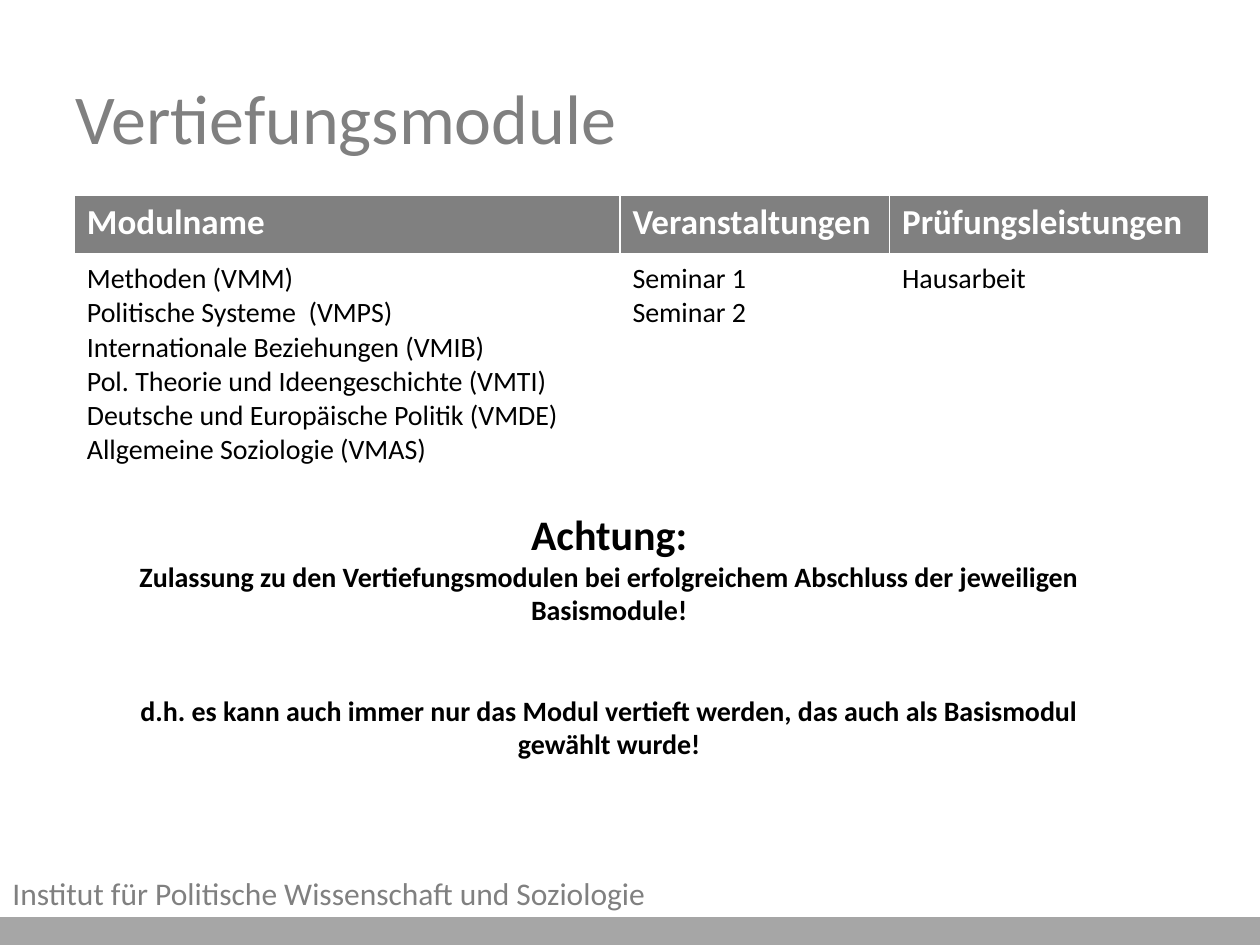
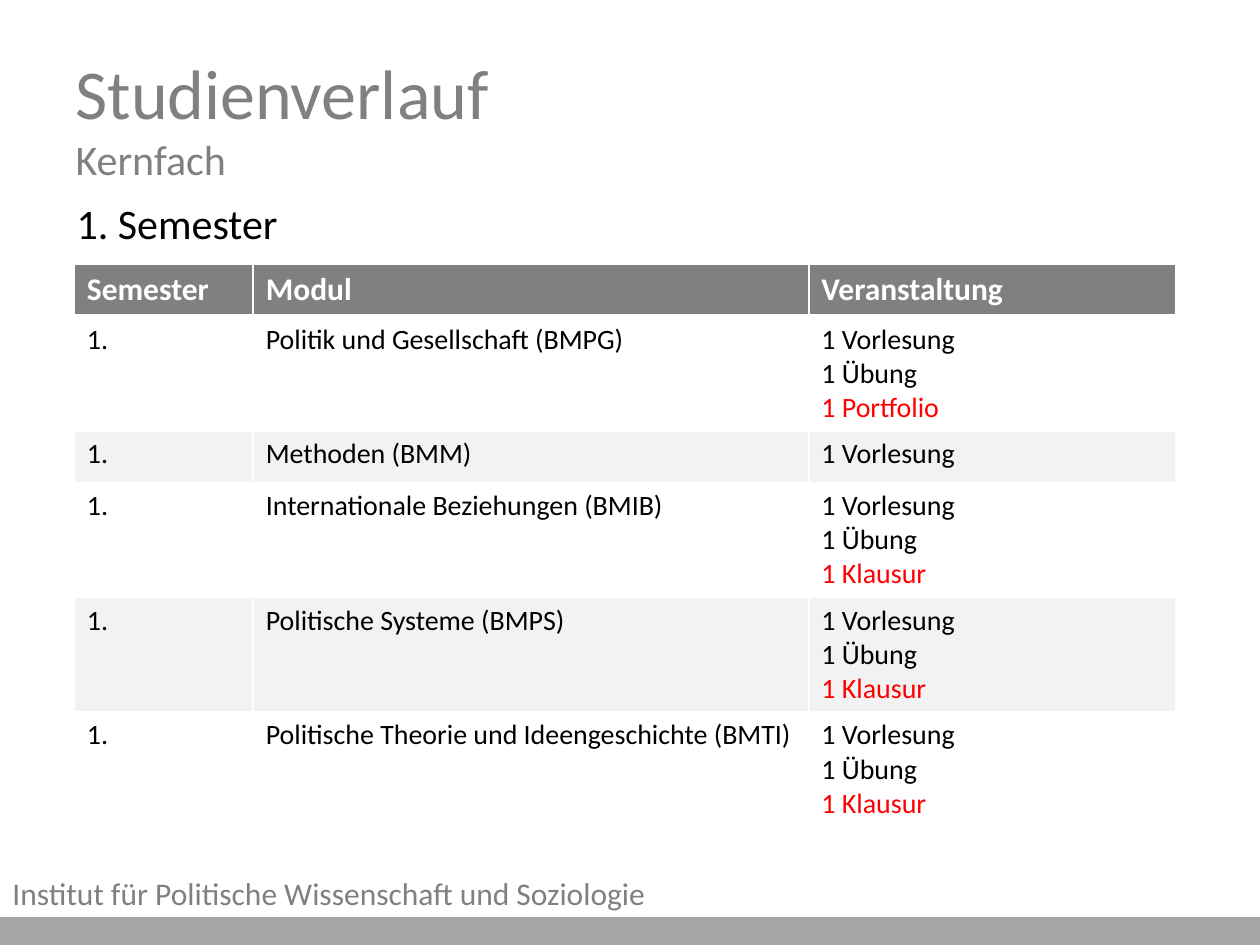
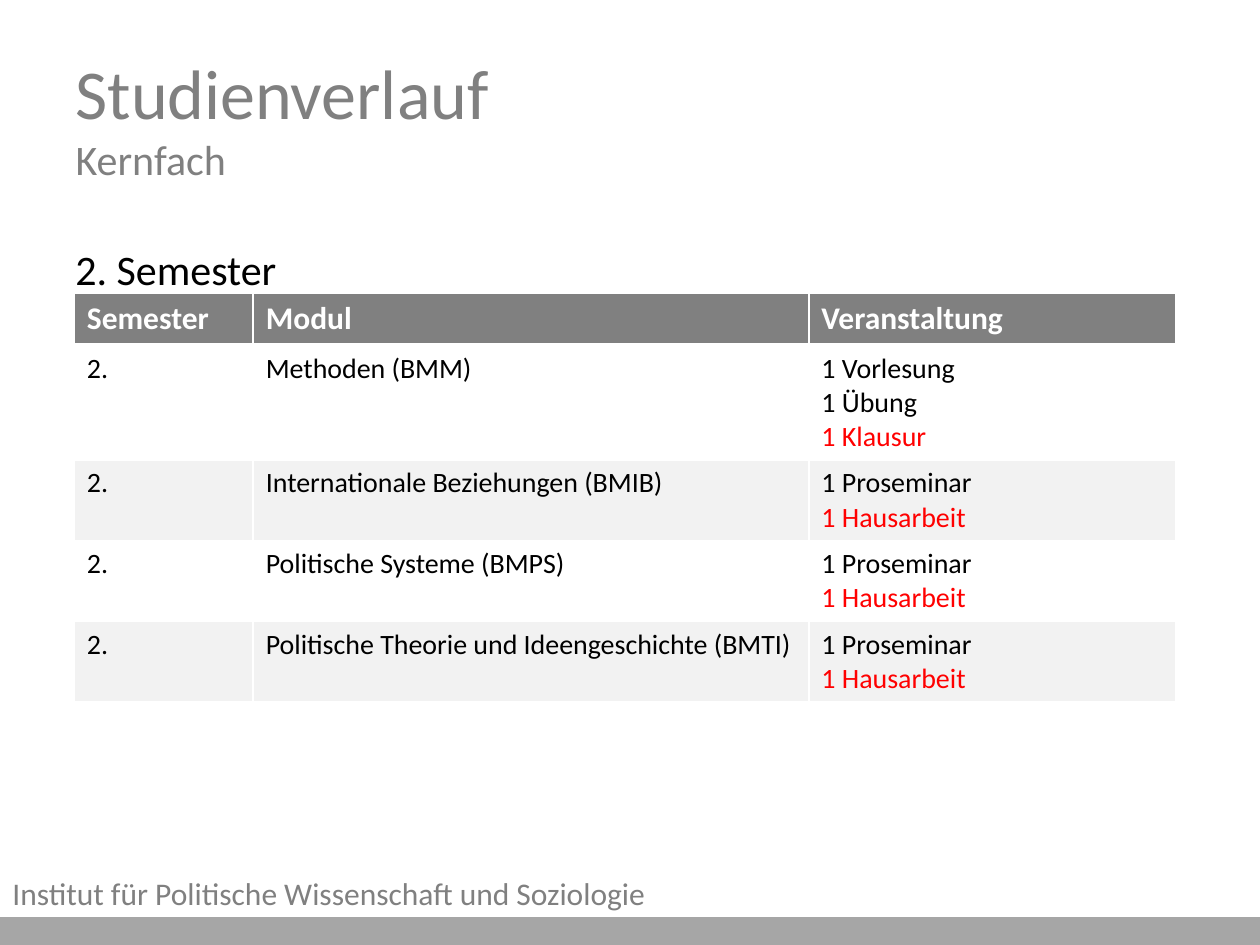
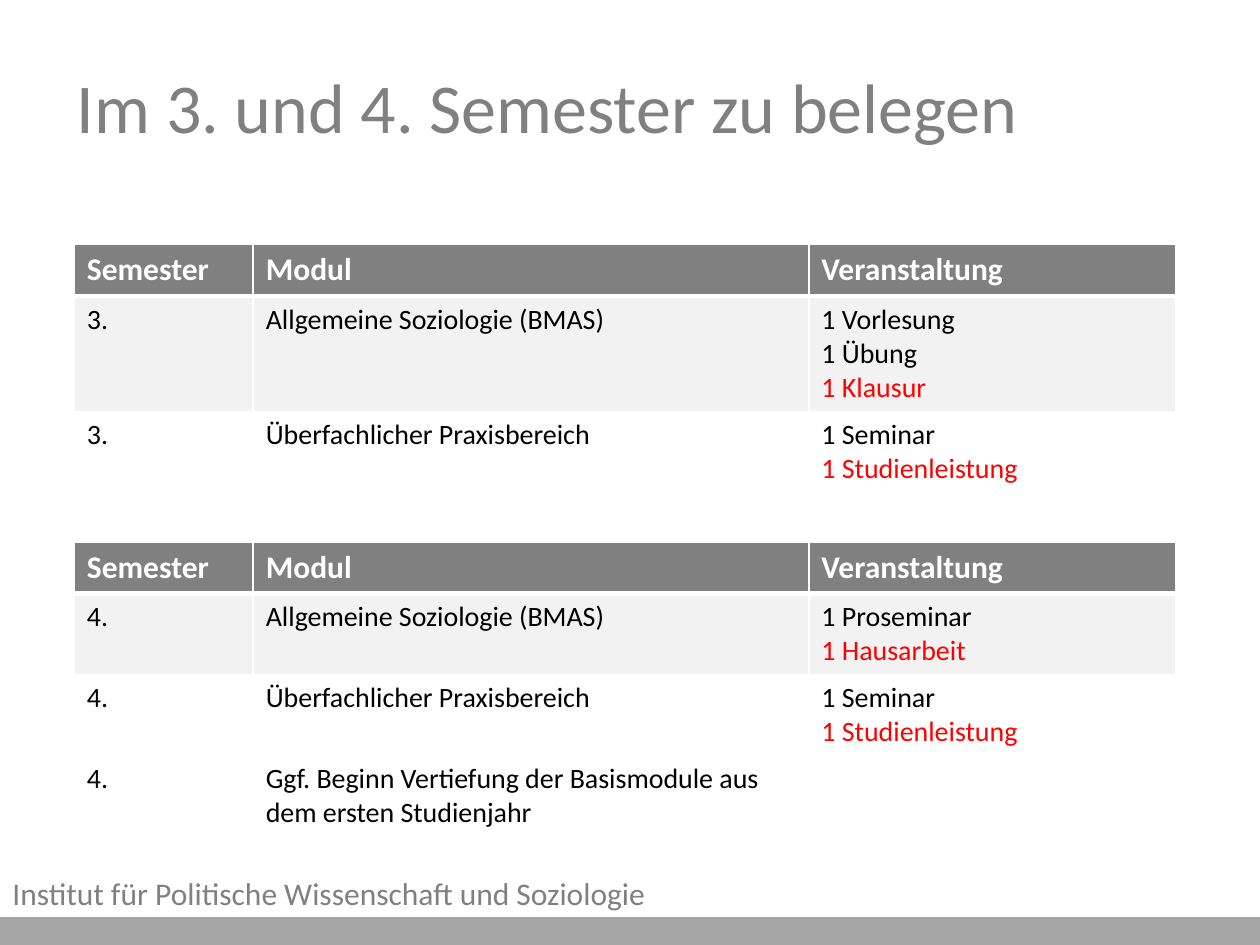
"""Build four slides on the modules and semesters of a politics degree."""
from dataclasses import dataclass
from lxml.etree import SubElement
from pptx import Presentation
from pptx.dml.color import RGBColor
from pptx.enum.shapes import MSO_SHAPE
from pptx.enum.text import MSO_ANCHOR, MSO_AUTO_SIZE, PP_ALIGN
from pptx.oxml.ns import qn
from pptx.util import Inches, Pt


@dataclass(frozen=True)
class Theme:
    font: str = "Calibri"
    grey: RGBColor = RGBColor(0x80, 0x80, 0x80)
    band: RGBColor = RGBColor(0xA6, 0xA6, 0xA6)
    tint: RGBColor = RGBColor(0xF2, 0xF2, 0xF2)
    white: RGBColor = RGBColor(0xFF, 0xFF, 0xFF)
    black: RGBColor = RGBColor(0, 0, 0)
    red: RGBColor = RGBColor(0xFF, 0, 0)
    title: int = 40
    sub: int = 24
    foot: int = 18
    body: int = 16


theme = Theme()
exams = {"1 Portfolio", "1 Klausur", "1 Hausarbeit", "1 Studienleistung"}
heads = ["Semester", "Modul", "Veranstaltung"]
widths = [1.42, 4.41, 2.91]


def write(frame, text, size, color, bold=False, align=PP_ALIGN.LEFT):
    frame.word_wrap = True
    frame.text = text
    for para in frame.paragraphs:
        para.alignment = align
        font = para.font
        font.name, font.size, font.bold = theme.font, Pt(size), bold
        font.color.rgb = theme.red if para.text in exams else color


def grid(slide, top, rows, tints=(), cols=widths, size=18, head=0.41):
    highs = [head] + [max(0.41, 0.1 + 0.27 * max(len(text.split("\n")) for text in row))
                      for row in rows[1:]]
    table = slide.shapes.add_table(len(rows), len(cols), Inches(0.59), Inches(top),
                                   Inches(sum(cols)), Inches(sum(highs))).table
    table.horz_banding = False
    for col, width in zip(table.columns, cols):
        col.width = Inches(width)
    for i, row in enumerate(rows):
        table.rows[i].height = Inches(highs[i])
        for j, text in enumerate(row):
            cell = table.cell(i, j)
            first = i == 0
            write(cell.text_frame, text, size if first else theme.body,
                  theme.white if first else theme.black, first)
            props = cell._tc.get_or_add_tcPr()
            for side in "LRTB":
                width = 3 if first and side == "B" else 1
                line = SubElement(props, qn(f"a:ln{side}"), w=str(Pt(width)))
                fill = SubElement(line, qn("a:solidFill"))
                SubElement(fill, qn("a:srgbClr"), val=str(theme.white))
            cell.fill.solid()
            cell.fill.fore_color.rgb = (theme.grey if first else
                                        theme.tint if i in tints else theme.white)


prs = Presentation()
prs.slide_width, prs.slide_height = Inches(10), Inches(7.5)

slides = []
for text, left, top in [("Vertiefungsmodule", 0.5, 0.3),
                        ("Studienverlauf\vKernfach", 0.5, 0.3),
                        ("Studienverlauf\vKernfach", 0.5, 0.3),
                        ("Im 3. und 4. Semester zu belegen", 0.51, 0.21)]:
    slide = prs.slides.add_slide(prs.slide_layouts[5])
    title = slide.shapes.title
    title.left, title.top = Inches(left), Inches(top)
    title.width, title.height = Inches(9), Inches(1.25)
    write(title.text_frame, text, theme.title, theme.grey)
    title.text_frame.vertical_anchor = MSO_ANCHOR.MIDDLE
    for run in title.text_frame.paragraphs[0].runs[1:]:
        run.font.size = Pt(theme.sub)
    slides.append(slide)
deep, one, two, late = slides

band = deep.shapes.add_shape(MSO_SHAPE.RECTANGLE, 0, Inches(7.29), Inches(10), Inches(0.21))
band.shadow.inherit = False
band.fill.solid()
band.fill.fore_color.rgb = band.line.color.rgb = theme.band
band.line.width = Pt(2)
foot = deep.shapes.add_textbox(0, Inches(6.89), Inches(7.09), Inches(0.4))
write(foot.text_frame, "Institut für Politische Wissenschaft und Soziologie",
      theme.foot, theme.grey)
for shape in (band, foot):
    prs.slide_master.element.cSld.spTree.append(shape.element)

modules = "\n".join(["Methoden (VMM)", "Politische Systeme  (VMPS)",
                     "Internationale Beziehungen (VMIB)",
                     "Pol. Theorie und Ideengeschichte (VMTI)",
                     "Deutsche und Europäische Politik (VMDE)",
                     "Allgemeine Soziologie (VMAS)"])
grid(deep, 1.55, [["Modulname", "Veranstaltungen", "Prüfungsleistungen"],
                  [modules, "Seminar 1\nSeminar 2", "Hausarbeit"]],
     cols=[4.33, 2.14, 2.53], size=20, head=0.48)
note = deep.shapes.add_textbox(Inches(0.86), Inches(3.99), Inches(7.95), Inches(2.42)).text_frame
write(note, "Achtung:\n"
      "Zulassung zu den Vertiefungsmodulen bei erfolgreichem Abschluss der jeweiligen Basismodule!\n"
      "d.h. es kann auch immer nur das Modul vertieft werden, das auch als Basismodul gewählt wurde!",
      theme.body, theme.black, True, PP_ALIGN.CENTER)
note.auto_size = MSO_AUTO_SIZE.SHAPE_TO_FIT_TEXT
note.paragraphs[0].font.size = Pt(theme.sub)
note.paragraphs[2].space_before = Pt(38)

for slide, text, left, top in [(one, "1. Semester", 0.51, 1.39), (two, "2. Semester", 0.5, 1.75)]:
    frame = slide.shapes.add_textbox(Inches(left), Inches(top), Inches(9), Inches(4.95)).text_frame
    frame.margin_top = Inches(0.18)
    write(frame, text, theme.sub, theme.black)

basic = "1 Vorlesung\n1 Übung\n1 Klausur"
paper = "1 Proseminar\n1 Hausarbeit"
study = "1 Seminar\n1 Studienleistung"
world = "Internationale Beziehungen (BMIB)"
system = "Politische Systeme (BMPS)"
ideas = "Politische Theorie und Ideengeschichte (BMTI)"
social = "Allgemeine Soziologie (BMAS)"
praxis = "Überfachlicher Praxisbereich"

grid(one, 2.1, [heads,
                ["1.", "Politik und Gesellschaft (BMPG)", "1 Vorlesung\n1 Übung\n1 Portfolio"],
                ["1.", "Methoden (BMM)", "1 Vorlesung"],
                ["1.", world, basic],
                ["1.", system, basic],
                ["1.", ideas, basic]], tints=(2, 4))
grid(two, 2.33, [heads,
                 ["2.", "Methoden (BMM)", basic],
                 ["2.", world, paper],
                 ["2.", system, paper],
                 ["2.", ideas, paper]], tints=(2, 4))
grid(late, 1.94, [heads, ["3.", social, basic], ["3.", praxis, study]], tints=(1,))
grid(late, 4.3, [heads,
                 ["4.", social, paper],
                 ["4.", praxis, study],
                 ["4.", "Ggf. Beginn Vertiefung der Basismodule aus dem ersten Studienjahr", ""]],
     tints=(1,))

prs.save("out.pptx")
